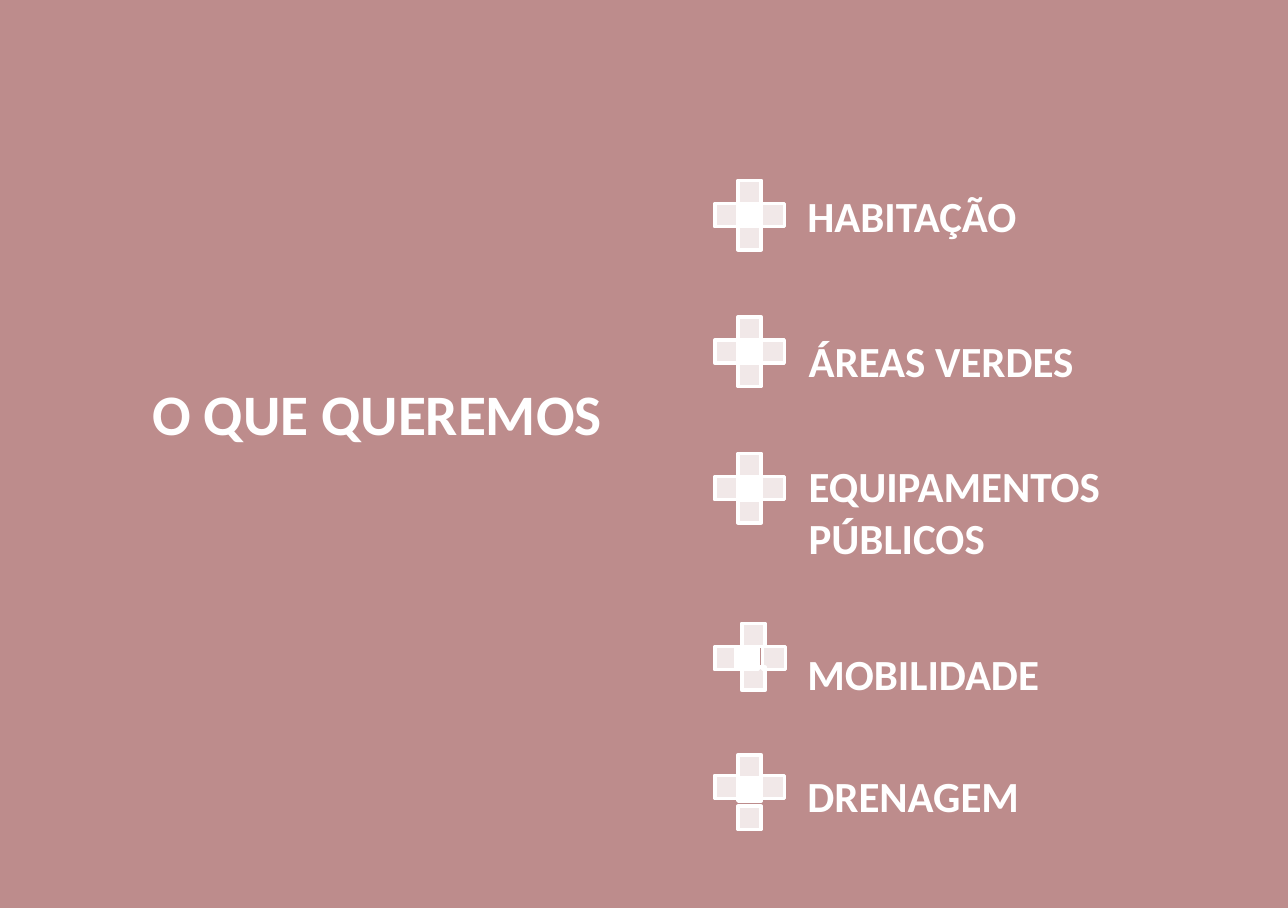
from dataclasses import dataclass
from typing import NamedTuple

from lxml.etree import SubElement
from pptx import Presentation
from pptx.dml.color import RGBColor
from pptx.enum.shapes import MSO_SHAPE
from pptx.enum.text import MSO_ANCHOR, MSO_AUTO_SIZE, PP_ALIGN
from pptx.oxml.ns import qn
from pptx.util import Emu, Pt

PX = 9144  # 100 px to the inch
SQUARE = 18


class Point(NamedTuple):
    x: int
    y: int


class Frame(NamedTuple):
    left: int
    top: int
    width: int
    height: int

    def emu(self) -> list[Emu]:
        return [Emu(value * PX) for value in self]


@dataclass(frozen=True)
class Theme:
    font: str = "Calibri"
    white: RGBColor = RGBColor(0xFF, 0xFF, 0xFF)
    backdrop: RGBColor = RGBColor(0xA6, 0x4D, 0x4D)
    veil: RGBColor = RGBColor(0xD9, 0xD9, 0xD9)
    veil_opacity: int = 45
    arm_opacity: int = 80
    title_size: Pt = Pt(32)
    label_size: Pt = Pt(24)
    outline: Pt = Pt(2)


THEME = Theme()
SLIDE = Frame(0, 0, 1000, 705)
EVEN_ARMS = (Point(-18, 0), Point(18, 0), Point(0, -18), Point(0, 18))


@dataclass(frozen=True)
class Topic:
    label: str
    frame: Frame
    core: Point
    arms: tuple[Point, ...] = EVEN_ARMS  # offsets from the core


TOPICS = (
    Topic("HABITAÇÃO", Frame(617, 142, 344, 50), Point(573, 158)),
    Topic("ÁREAS VERDES", Frame(618, 255, 335, 50), Point(573, 264)),
    Topic("EQUIPAMENTOS PÚBLICOS", Frame(618, 352, 335, 91), Point(573, 370)),
    Topic("MOBILIDADE", Frame(617, 498, 344, 50), Point(571, 502),
          (Point(-16, 0), Point(21, 0), Point(5, -18), Point(5, 16))),
    Topic("DRENAGEM", Frame(617, 593, 344, 50), Point(573, 604),
          (Point(-18, -2), Point(18, -2), Point(0, -18), Point(0, 22))),
)


def add_rectangle(shapes, frame: Frame, color: RGBColor, opacity: int = 100):
    box = shapes.add_shape(MSO_SHAPE.RECTANGLE, *frame.emu())
    box.shadow.inherit = False
    box.fill.solid()
    box.fill.fore_color.rgb = color
    if opacity < 100:
        swatch = box.element.spPr.find(qn("a:solidFill"))[0]
        SubElement(swatch, qn("a:alpha"), val=str(opacity * 1000))
    box.line.fill.background()
    return box


def add_cross(page, topic: Topic) -> None:
    group = page.shapes.add_group_shape()
    for offset in (*topic.arms, Point(0, 0)):
        is_core = offset == (0, 0)
        frame = Frame(topic.core.x + offset.x, topic.core.y + offset.y, SQUARE, SQUARE)
        square = add_rectangle(group.shapes, frame, THEME.white,
                               100 if is_core else THEME.arm_opacity)
        square.line.color.rgb = THEME.white
        square.line.width = THEME.outline


def write_text(box, text: str, size: Pt, align: PP_ALIGN) -> None:
    body = box.text_frame
    body.word_wrap = True
    body.auto_size = MSO_AUTO_SIZE.NONE
    body.vertical_anchor = MSO_ANCHOR.TOP
    para = body.paragraphs[0]
    para.alignment = align
    span = para.add_run()
    span.text = text
    span.font.name = THEME.font
    span.font.size = size
    span.font.bold = True
    span.font.color.rgb = THEME.white


def add_title(page) -> None:
    title = page.shapes.title
    title.left, title.top, title.width, title.height = Frame(86, 289, 414, 64).emu()
    write_text(title, "O QUE QUEREMOS", THEME.title_size, PP_ALIGN.CENTER)


def add_backdrop(page) -> None:
    """Colour the page and lay a translucent veil beneath the title."""
    page.background.fill.solid()
    page.background.fill.fore_color.rgb = THEME.backdrop
    veil = add_rectangle(page.shapes, SLIDE, THEME.veil, THEME.veil_opacity)
    page.shapes.title.element.addprevious(veil.element)


def main() -> None:
    deck = Presentation()
    deck.slide_width, deck.slide_height = SLIDE.emu()[2:]
    page = deck.slides.add_slide(deck.slide_layouts[5])
    add_backdrop(page)
    add_title(page)
    for topic in TOPICS:
        add_cross(page, topic)
        label = page.shapes.add_textbox(*topic.frame.emu())
        write_text(label, topic.label, THEME.label_size, PP_ALIGN.LEFT)
    deck.save("out.pptx")


if __name__ == "__main__":
    main()
